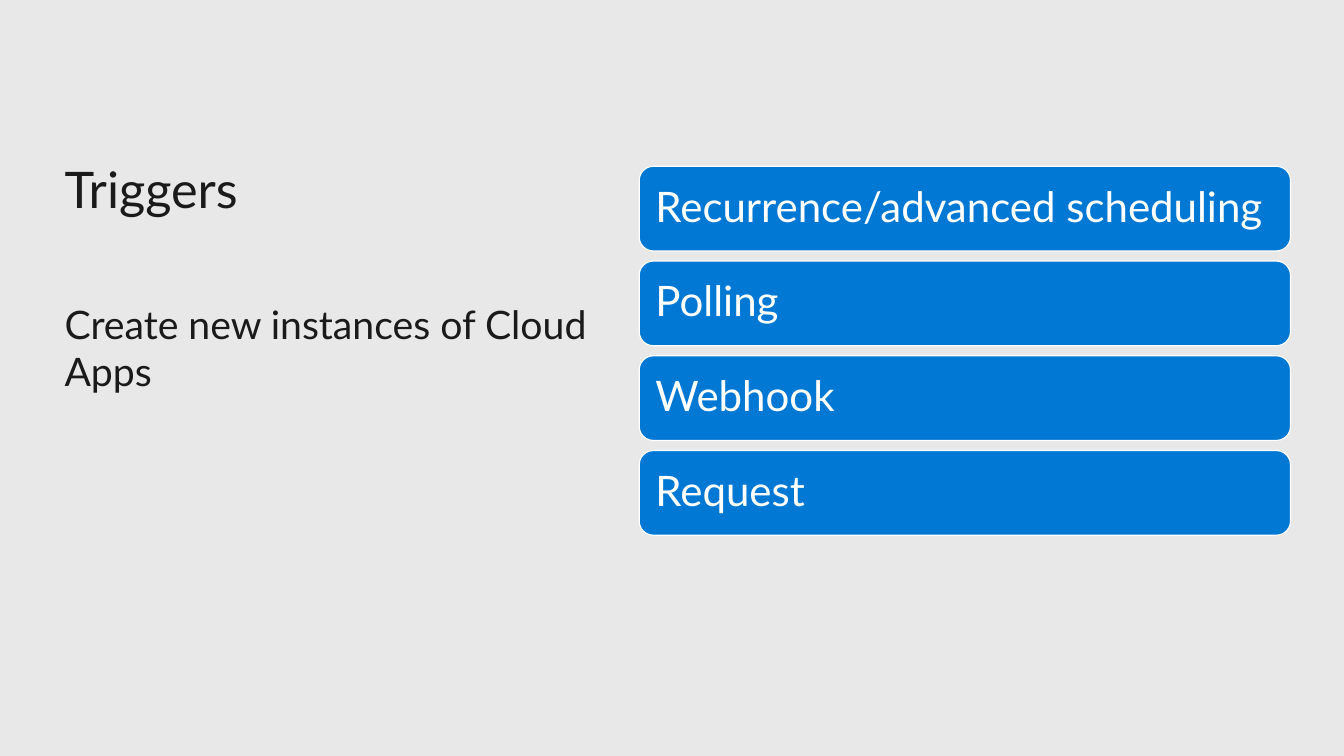
from dataclasses import dataclass

import pptx
import pptx.dml.color
import pptx.enum.shapes
import pptx.enum.text
import pptx.util

Inches = pptx.util.Inches
Pt = pptx.util.Pt


@dataclass(frozen=True)
class Theme:
    font: str = "Lato"
    background: str = "E8E8E8"
    ink: str = "1A1A1A"
    card: str = "0078D4"
    white: str = "FFFFFF"
    title_size: float = 36
    body_size: float = 28
    card_size: float = 30


@dataclass(frozen=True)
class Line:
    text: str
    size: float
    space_before: float = 0


@dataclass(frozen=True)
class Card:
    text: str
    top: float


THEME = Theme()
INTRO = [
    Line("Triggers", THEME.title_size),
    Line("Create new instances of Cloud Apps", THEME.body_size, 58),
]
TRIGGERS = ["Recurrence/advanced scheduling", "Polling", "Webhook", "Request"]
CARD_LEFT, CARD_TOP, CARD_WIDTH, CARD_HEIGHT = 6.34, 1.65, 6.46, 0.84
CARD_STEP = 0.94
CARDS = [Card(text, CARD_TOP + i * CARD_STEP) for i, text in enumerate(TRIGGERS)]


def rgb(value: str) -> pptx.dml.color.RGBColor:
    return pptx.dml.color.RGBColor.from_string(value)


def set_margins(tf, margin: float) -> None:
    tf.margin_left = tf.margin_right = Inches(margin)
    tf.margin_top = tf.margin_bottom = Inches(margin)


def write(p, text: str, size: float, color: str) -> None:
    p.text = text
    p.alignment = pptx.enum.text.PP_ALIGN.LEFT
    for r in p.runs:
        r.font.name = THEME.font
        r.font.size = Pt(size)
        r.font.color.rgb = rgb(color)


def draw_intro(s, lines: list[Line]) -> None:
    sp = s.shapes.add_textbox(Inches(0.64), Inches(1.57), Inches(5.7), Inches(2.36))
    tf = sp.text_frame
    tf.word_wrap = True
    set_margins(tf, 0)
    for i, line in enumerate(lines):
        p = tf.add_paragraph() if i else tf.paragraphs[0]
        write(p, line.text, line.size, THEME.ink)
        if line.space_before:
            p.space_before = Pt(line.space_before)


def draw_card(s, card: Card) -> None:
    sp = s.shapes.add_shape(
        pptx.enum.shapes.MSO_SHAPE.ROUNDED_RECTANGLE,
        Inches(CARD_LEFT), Inches(card.top), Inches(CARD_WIDTH), Inches(CARD_HEIGHT),
    )
    sp.shadow.inherit = False
    sp.fill.solid()
    sp.fill.fore_color.rgb = rgb(THEME.card)
    sp.line.color.rgb = rgb(THEME.white)
    sp.line.width = Pt(0.85)
    tf = sp.text_frame
    tf.word_wrap = True
    tf.vertical_anchor = pptx.enum.text.MSO_ANCHOR.MIDDLE
    set_margins(tf, 0.12)
    p = tf.paragraphs[0]
    write(p, card.text, THEME.card_size, THEME.white)
    p.line_spacing = 0.9


def main() -> None:
    prs = pptx.Presentation()
    prs.slide_width = Inches(13.33)
    prs.slide_height = Inches(7.5)
    s = prs.slides.add_slide(prs.slide_layouts[6])
    s.background.fill.solid()
    s.background.fill.fore_color.rgb = rgb(THEME.background)
    draw_intro(s, INTRO)
    for card in CARDS:
        draw_card(s, card)
    prs.save("out.pptx")


if __name__ == "__main__":
    main()
